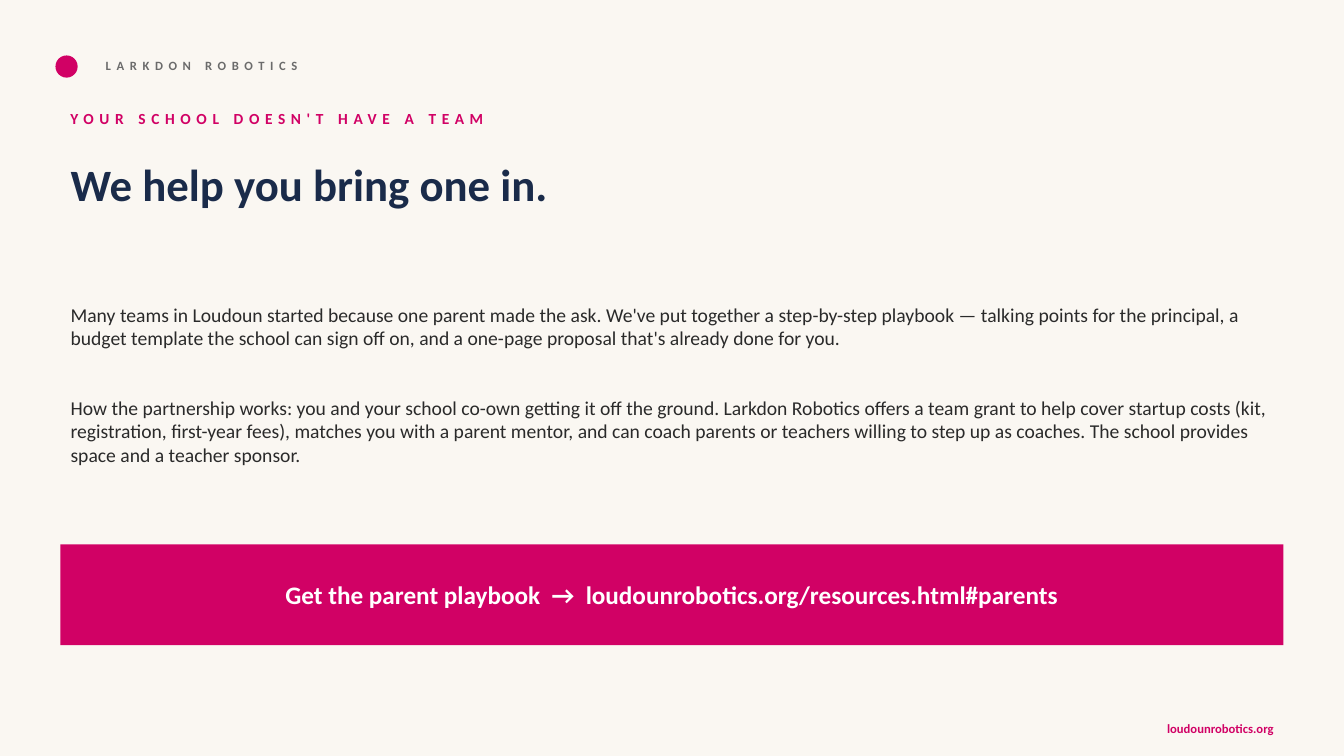
from dataclasses import dataclass

import pptx
import pptx.dml.color
import pptx.enum.shapes
import pptx.enum.text
import pptx.oxml.ns
import pptx.shapes.base
import pptx.slide
import pptx.text.text
import pptx.util
from lxml import etree

Inches = pptx.util.Inches
Align = pptx.enum.text.PP_ALIGN
Anchor = pptx.enum.text.MSO_ANCHOR
ShapeKind = pptx.enum.shapes.MSO_SHAPE


@dataclass(frozen=True)
class Theme:
    font: str = "Calibri"
    background: str = "FAF7F2"
    accent: str = "D10165"
    navy: str = "1A2B4A"
    ink: str = "2A2A2A"
    muted: str = "6B6B6B"
    white: str = "FFFFFF"
    title_size: float = 32
    action_size: float = 18
    body_size: float = 14
    kicker_size: float = 11
    small_size: float = 9
    tracking: float = 4


@dataclass(frozen=True)
class Box:
    left: float
    top: float
    width: float
    height: float

    def lengths(self) -> tuple[int, ...]:
        return tuple(Inches(n) for n in (self.left, self.top, self.width, self.height))


@dataclass(frozen=True)
class Style:
    size: float
    color: str
    bold: bool = True
    tracking: float = 0
    align: Align = Align.LEFT
    anchor: Anchor = Anchor.MIDDLE
    gap: float = 0  # points between paragraphs


@dataclass(frozen=True)
class Label:
    text: str
    box: Box
    style: Style


THEME = Theme()
MARGIN = 0.6
CONTENT_WIDTH = 12.13

LABELS = (
    Label("LARKDON ROBOTICS", Box(0.95, 0.5, 5, 0.3),
          Style(THEME.small_size, THEME.muted, tracking=THEME.tracking)),
    Label("YOUR SCHOOL DOESN'T HAVE A TEAM", Box(MARGIN, 1, 8, 0.35),
          Style(THEME.kicker_size, THEME.accent, tracking=THEME.tracking)),
    Label("loudounrobotics.org", Box(10.33, 7.08, 2.4, 0.3),
          Style(THEME.small_size, THEME.accent, align=Align.RIGHT)),
)
TITLE = "We help you bring one in."
BODY = (
    "Many teams in Loudoun started because one parent made the ask. We've put together "
    "a step-by-step playbook — talking points for the principal, a budget template the "
    "school can sign off on, and a one-page proposal that's already done for you.",
    "How the partnership works: you and your school co-own getting it off the ground. "
    "Larkdon Robotics offers a team grant to help cover startup costs (kit, registration, "
    "first-year fees), matches you with a parent mentor, and can coach parents or teachers "
    "willing to step up as coaches. The school provides space and a teacher sponsor.",
)
ACTION = "Get the parent playbook  →  loudounrobotics.org/resources.html#parents"


def rgb(color: str) -> pptx.dml.color.RGBColor:
    return pptx.dml.color.RGBColor.from_string(color)


def format_paragraph(paragraph: pptx.text.text._Paragraph, style: Style) -> None:
    # Plain paragraph without a bullet or hanging indent
    properties = paragraph._p.get_or_add_pPr()
    properties.set("marL", "0")
    properties.set("indent", "0")
    etree.SubElement(properties, pptx.oxml.ns.qn("a:buNone"))
    paragraph.alignment = style.align
    paragraph.space_before = pptx.util.Pt(0)
    font = paragraph.font
    font.name = THEME.font
    font.size = pptx.util.Pt(style.size)
    font.bold = style.bold
    font.color.rgb = rgb(style.color)
    if style.tracking:
        for run in paragraph.runs:
            run._r.get_or_add_rPr().set("spc", str(round(style.tracking * 100)))


def write_text(shape: pptx.shapes.base.BaseShape, texts: tuple[str, ...], style: Style) -> None:
    frame = shape.text_frame
    frame.text = "\n".join(texts)
    frame.word_wrap = True
    frame.auto_size = pptx.enum.text.MSO_AUTO_SIZE.NONE
    frame.vertical_anchor = style.anchor
    for paragraph in frame.paragraphs:
        format_paragraph(paragraph, style)
    for paragraph in frame.paragraphs[:-1]:
        paragraph.space_after = pptx.util.Pt(style.gap)


def fill_placeholder(shape: pptx.shapes.base.BaseShape, box: Box,
                     texts: tuple[str, ...], style: Style) -> None:
    shape.left, shape.top, shape.width, shape.height = box.lengths()
    write_text(shape, texts, style)


def add_label(slide: pptx.slide.Slide, label: Label) -> None:
    write_text(slide.shapes.add_textbox(*label.box.lengths()), (label.text,), label.style)


def add_accent_shape(slide: pptx.slide.Slide, kind: ShapeKind,
                     box: Box) -> pptx.shapes.base.BaseShape:
    shape = slide.shapes.add_shape(kind, *box.lengths())
    shape.shadow.inherit = False
    shape.fill.solid()
    shape.fill.fore_color.rgb = rgb(THEME.accent)
    shape.line.fill.background()
    return shape


def main() -> None:
    presentation = pptx.Presentation()
    presentation.slide_width = Inches(13.33)
    presentation.slide_height = Inches(7.5)
    slide = presentation.slides.add_slide(presentation.slide_layouts.get_by_name("Title and Content"))
    slide.background.fill.solid()
    slide.background.fill.fore_color.rgb = rgb(THEME.background)

    # Header dot, header, kicker and footer
    add_accent_shape(slide, ShapeKind.OVAL, Box(0.55, 0.55, 0.22, 0.22))
    for label in LABELS:
        add_label(slide, label)

    # Title and body
    fill_placeholder(slide.shapes.title, Box(MARGIN, 1.5, CONTENT_WIDTH, 1.15), (TITLE,),
                     Style(THEME.title_size, THEME.navy, anchor=Anchor.TOP))
    fill_placeholder(slide.placeholders[1], Box(MARGIN, 2.95, CONTENT_WIDTH, 1.5), BODY,
                     Style(THEME.body_size, THEME.ink, bold=False, anchor=Anchor.TOP, gap=33))

    # Call to action
    banner = add_accent_shape(slide, ShapeKind.RECTANGLE, Box(MARGIN, 5.4, CONTENT_WIDTH, 1))
    write_text(banner, (ACTION,), Style(THEME.action_size, THEME.white, align=Align.CENTER))

    presentation.save("out.pptx")


if __name__ == "__main__":
    main()
